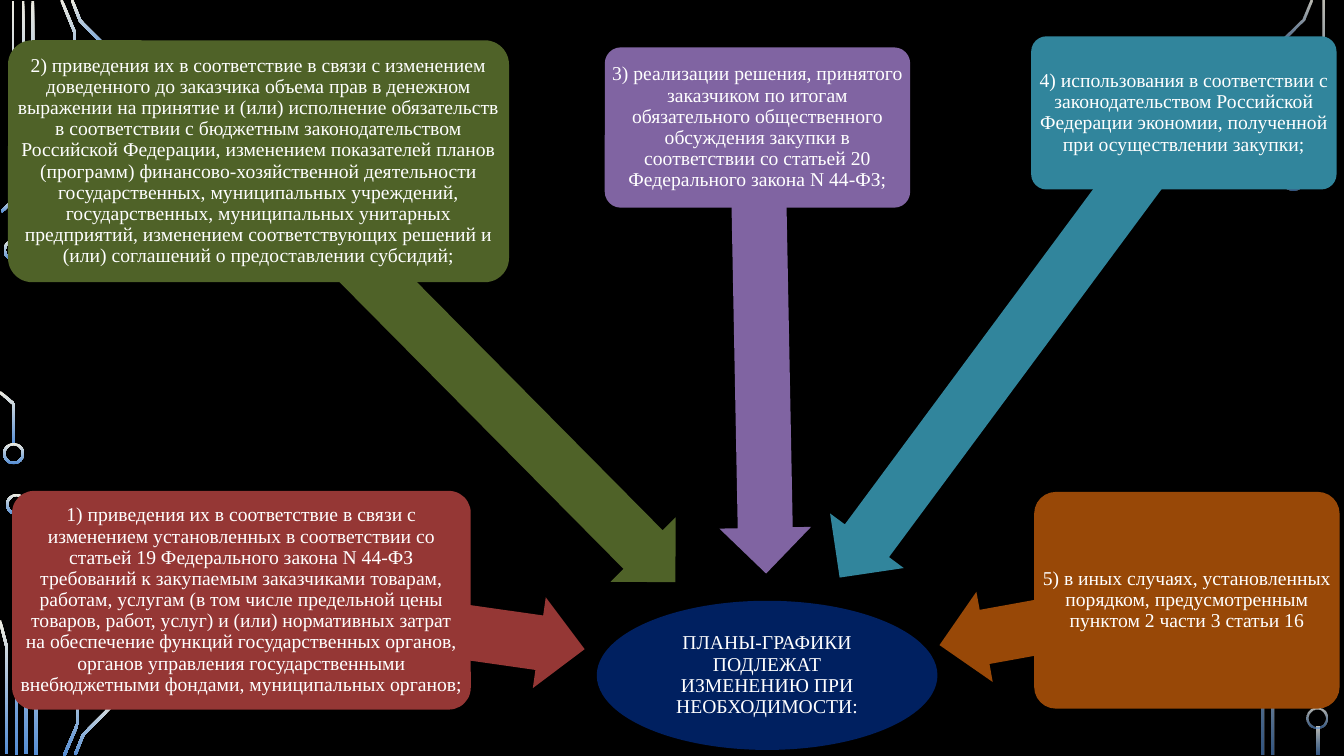
import math
from dataclasses import dataclass

import lxml.etree
import pptx
import pptx.dml.color
import pptx.enum.shapes
import pptx.enum.text
import pptx.oxml.ns
import pptx.util

SHAPE = pptx.enum.shapes.MSO_SHAPE
CELL = pptx.util.Inches(0.1)
COLUMNS, ROWS = 133.33, 75
FONT = "Times New Roman"
COLORS = {
    "background": "000000", "text": "FFFFFF", "trace_top": "EEECE1", "trace_bottom": "558ED5",
    "goal": "002060", "red": "953735", "green": "4F6228", "purple": "8064A2",
    "teal": "31859C", "brown": "984807",
}


@dataclass
class Box:
    left: float
    top: float
    width: float
    height: float

    def center(self):
        return self.left + self.width / 2, self.top + self.height / 2

    def inset(self, share):
        dx, dy = self.width * share, self.height * share
        return Box(self.left + dx, self.top + dy, self.width - 2 * dx, self.height - 2 * dy)

    def lengths(self):
        return [cells(n) for n in (self.left, self.top, self.width, self.height)]


SLIDE = Box(0, 0, COLUMNS, ROWS)
LEFT_EDGE = Box(0, 0, 12, ROWS)
RIGHT_EDGE = Box(125, 0, COLUMNS - 125, ROWS)
GOAL = Box(59.2, 59.6, 33.8, 14.8)
GOAL_TEXT = "ПЛАНЫ-ГРАФИКИ ПОДЛЕЖАТ ИЗМЕНЕНИЮ ПРИ НЕОБХОДИМОСТИ:"

LEFT_TRACES = [
    [(1.3, 0.1), (1.3, 24)],
    [(6.1, 19.85), (2.3, 10.9), (2.3, 0.1)],
    [(7.1, 15.65), (3.25, 6.65), (3.25, 0.1)],
    [(7.45, 10), (7.45, 3.3), (6.1, 0)],
    [(11.55, 5.7), (7.95, 2.05), (7.15, 0)],
    [(0.15, 21), (1.4, 19.8)],
    [(1.4, 44.1), (1.4, 40.1), (0, 38.9)],
    [(1.65, 51), (1.65, 74.9)],
    [(2.55, 74.8), (2.55, 64.1), (6.35, 55.15)],
    [(0.65, 74.8), (0.65, 64.1), (0, 61.55)],
    [(3.55, 74.9), (3.55, 68.2), (7.35, 59.35)],
    [(6.35, 75), (7.75, 71.7), (7.75, 65)],
    [(7.45, 74.9), (8.25, 72.9), (11.8, 69.3)],
]
LEFT_RINGS = [(1.4, 24.8), (1.35, 45), (1.65, 50.05)]
RIGHT_TRACES = [
    [(0.7, 5.55), (4.25, 1.95), (5.05, 0)],
    [(1.25, 74.9), (1.25, 69.3), (4.3, 62.35)],
    [(3.2, 16.9), (3.2, 13.85), (6.25, 10.75), (6.25, 0.1)],
    [(0.25, 74.9), (0.25, 61.35), (3.35, 58.35), (3.35, 55.2)],
    [(5.75, 72.1), (5.75, 74.9)],
]
RIGHT_RINGS = [(3.25, 17.85), (5.65, 71.2)]

REASONS = [
    (Box(1.2, 48.7, 45.5, 21.7), (58, 64.4), "red",
     "1) приведения их в соответствие в связи с изменением установленных в соответствии со статьей 19 "
     "Федерального закона N 44-ФЗ требований к закупаемым заказчиками товарам, работам, услугам (в том "
     "числе предельной цены товаров, работ, услуг) и (или) нормативных затрат на обеспечение функций "
     "государственных органов, органов управления государственными внебюджетными фондами, "
     "муниципальных органов;"),
    (Box(0.8, 4, 49.7, 24), (67, 57.75), "green",
     "2) приведения их в соответствие в связи с изменением доведенного до заказчика объема прав в "
     "денежном выражении на принятие и (или) исполнение обязательств в соответствии с бюджетным "
     "законодательством Российской Федерации, изменением показателей планов (программ) "
     "финансово-хозяйственной деятельности государственных, муниципальных учреждений, "
     "государственных, муниципальных унитарных предприятий, изменением соответствующих решений и "
     "(или) соглашений о предоставлении субсидий;"),
    (Box(60, 4.7, 30.3, 15.9), (76, 56.9), "purple",
     "3) реализации решения, принятого заказчиком по итогам обязательного общественного обсуждения "
     "закупки в соответствии со статьей 20 Федерального закона N 44-ФЗ;"),
    (Box(102.3, 3.6, 30.3, 15.2), (83.3, 57.3), "teal",
     "4) использования в соответствии с законодательством Российской Федерации экономии, полученной "
     "при осуществлении закупки;"),
    (Box(102.6, 48.8, 30.3, 21.5), (93.2, 64), "brown",
     "5) в иных случаях, установленных порядком, предусмотренным пунктом 2 части 3 статьи 16"),
]


def cells(count):
    return pptx.util.Emu(round(count * CELL))


def rgb(name):
    return pptx.dml.color.RGBColor.from_string(COLORS[name])


def add_block(page, kind, box, color, adjustments=()):
    block = page.shapes.add_shape(kind, *box.lengths())
    block.shadow.inherit = False
    block.fill.solid()
    block.fill.fore_color.rgb = rgb(color)
    block.line.fill.background()
    for index, value in enumerate(adjustments):
        block.adjustments[index] = value
    return block


def write(shape, text, margin):
    frame = shape.text_frame
    frame.word_wrap = True
    frame.auto_size = pptx.enum.text.MSO_AUTO_SIZE.NONE
    frame.vertical_anchor = pptx.enum.text.MSO_ANCHOR.MIDDLE
    frame.margin_left = frame.margin_right = cells(margin)
    frame.margin_top = frame.margin_bottom = cells(margin)
    frame.text = text
    para = frame.paragraphs[0]
    para.alignment = pptx.enum.text.PP_ALIGN.CENTER
    para.line_spacing = 0.9
    para.font.name = FONT
    para.font.size = pptx.util.Pt(14)
    para.font.color.rgb = rgb("text")


def paint_trace(shape, opacities):
    shape.shadow.inherit = False
    shape.line.fill.background()
    shape.fill.gradient()
    shape.fill.gradient_angle = 270
    names = ("trace_top", "trace_bottom")
    for stop, name, position in zip(shape.fill.gradient_stops, names, (0, 1)):
        stop.color.rgb = rgb(name)
        stop.position = position
    for color, opacity in zip(shape.element.spPr.findall(".//" + pptx.oxml.ns.qn("a:srgbClr")), opacities):
        if opacity < 100:
            alpha = lxml.etree.SubElement(color, pptx.oxml.ns.qn("a:alpha"))
            alpha.set("val", str(opacity * 1000))


def stroke_outline(points, half_width=0.13):
    normals = []
    for (x1, y1), (x2, y2) in zip(points, points[1:]):
        length = math.hypot(x2 - x1, y2 - y1)
        normals.append(((y1 - y2) / length, (x2 - x1) / length))
    near, far = [], []
    for (x, y), (ax, ay), (bx, by) in zip(points, normals[:1] + normals, normals + normals[-1:]):
        reach = half_width / (1 + ax * bx + ay * by)
        dx, dy = (ax + bx) * reach, (ay + by) * reach
        near.append((x + dx, y + dy))
        far.append((x - dx, y - dy))
    return near + far[::-1]


def add_circuit(page, box, traces, rings, opacities):
    for trace in traces:
        outline = [(cells(box.left + x), cells(box.top + y)) for x, y in stroke_outline(trace)]
        builder = page.shapes.build_freeform(*outline[0])
        builder.add_line_segments(outline[1:], close=True)
        paint_trace(builder.convert_to_shape(), opacities)
    size = 2.1
    for x, y in rings:
        place = Box(box.left + x - size / 2, box.top + y - size / 2, size, size)
        ring = page.shapes.add_shape(SHAPE.DONUT, *place.lengths())
        ring.adjustments[0] = 0.1
        paint_trace(ring, opacities)


def add_goal(page, box):
    add_block(page, SHAPE.OVAL, box, "goal")
    title = page.shapes.title
    title.left, title.top, title.width, title.height = box.inset(0.15).lengths()
    write(title, GOAL_TEXT, 0.1)
    page.shapes.element.append(title.element)


def add_reason(page, box, tip, color, text):
    (tail_x, tail_y), (tip_x, tip_y) = box.center(), tip
    length, thickness = math.hypot(tail_x - tip_x, tail_y - tip_y), 9.1
    place = Box((tail_x + tip_x - length) / 2, (tail_y + tip_y - thickness) / 2, length, thickness)
    arrow = add_block(page, SHAPE.LEFT_ARROW, place, color, (0.6, 0.5))
    arrow.rotation = math.degrees(math.atan2(tail_y - tip_y, tail_x - tip_x)) % 360
    write(add_block(page, SHAPE.ROUNDED_RECTANGLE, box, color, (0.1,)), text, 0.2)


def main():
    deck = pptx.Presentation()
    deck.slide_width, deck.slide_height = SLIDE.lengths()[2:]
    page = deck.slides.add_slide(deck.slide_layouts.get_by_name("Title Only"))
    page.background.fill.solid()
    page.background.fill.fore_color.rgb = rgb("background")
    add_circuit(page, LEFT_EDGE, LEFT_TRACES, LEFT_RINGS, (100, 100))
    add_circuit(page, RIGHT_EDGE, RIGHT_TRACES, RIGHT_RINGS, (80, 60))
    add_goal(page, GOAL)
    for reason in REASONS:
        add_reason(page, *reason)
    deck.save("out.pptx")


if __name__ == "__main__":
    main()
